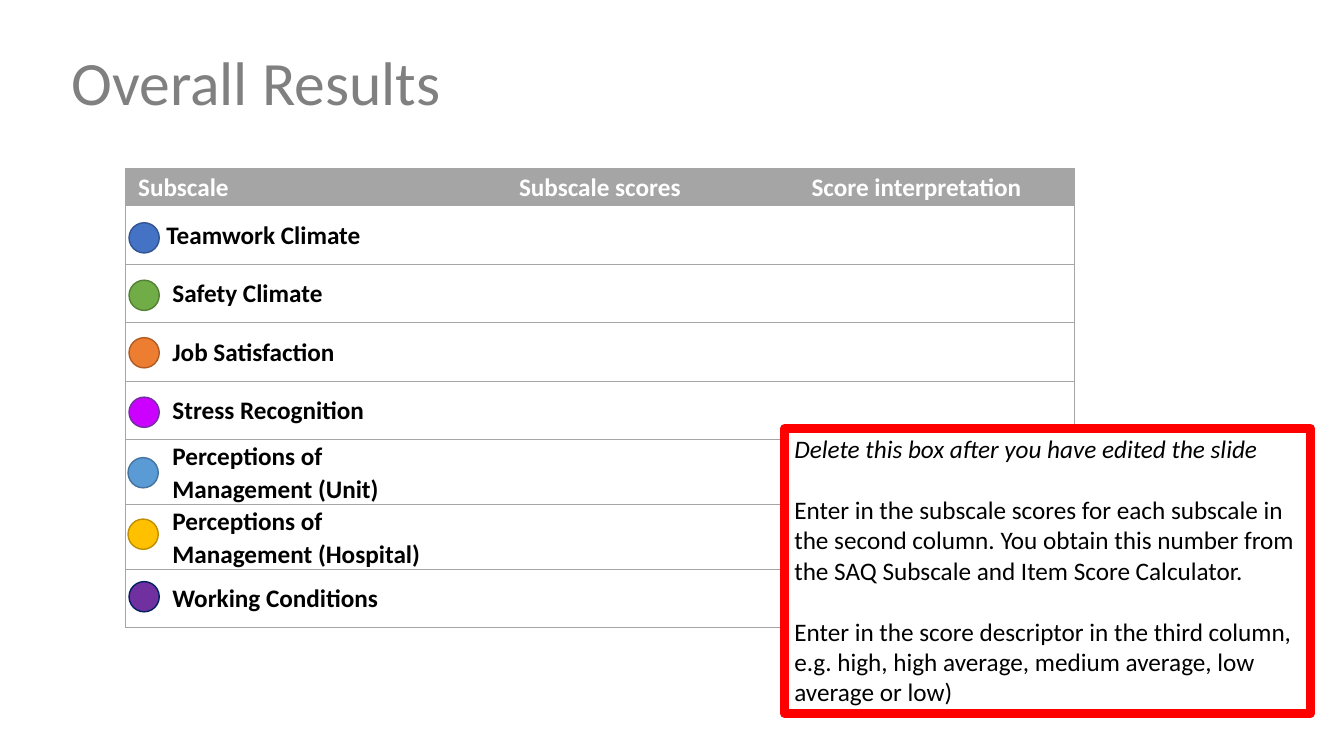
from pptx import Presentation
from pptx.dml.color import RGBColor
from pptx.enum.shapes import MSO_SHAPE
from pptx.enum.text import MSO_ANCHOR, PP_ALIGN
from pptx.oxml.ns import qn
from pptx.util import Inches, Pt
from lxml.etree import SubElement

FONT = "Calibri"
COLORS = {
    "grey": "A5A5A5", "title": "808080", "white": "FFFFFF",
    "black": "000000", "red": "FF0000",
}
HEADERS = ["Subscale", "Subscale scores", "Score interpretation"]
# label, text indent, dot left, dot top, dot fill, dot outline
SUBSCALES = [
    ("Teamwork Climate", 0.41, 1.28, 2.21, "4472C4", "325491"),
    ("Safety Climate", 0.47, 1.28, 2.78, "70AD47", "538035"),
    ("Job Satisfaction", 0.47, 1.28, 3.35, "ED7D31", "AF5C24"),
    ("Stress Recognition", 0.47, 1.28, 3.94, "CC00FF", "7030A0"),
    ("Perceptions of\nManagement (Unit)", 0.47, 1.27, 4.54, "5B9BD5", "43739E"),
    ("Perceptions of\nManagement (Hospital)", 0.47, 1.27, 5.15, "FFC000", "BD8E00"),
    ("Working Conditions", 0.47, 1.28, 5.77, "7030A0", "002060"),
]
INSTRUCTIONS = [
    "Delete this box after you have edited the slide",
    "Enter in the subscale scores for each subscale in the second column. "
    "You obtain this number from the SAQ Subscale and Item Score Calculator.",
    "Enter in the score descriptor in the third column, e.g. high, high average, "
    "medium average, low average or low)",
]


def rgb(value):
    return RGBColor.from_string(value)


def format_text(tf, size, color, bold=False, spacing=1.0, align=PP_ALIGN.LEFT):
    for p in tf.paragraphs:
        p.alignment = align
        p.line_spacing = spacing
        for r in p.runs:
            r.font.name = FONT
            r.font.size = Pt(size)
            r.font.bold = bold
            r.font.color.rgb = rgb(color)


def add_title(slide, text):
    tf = slide.shapes.add_textbox(
        Inches(0.61), Inches(0.4), Inches(11.22), Inches(0.89)).text_frame
    tf.word_wrap = True
    tf.vertical_anchor = MSO_ANCHOR.MIDDLE
    tf.text = text
    format_text(tf, 44, COLORS["title"], spacing=0.9)


def set_borders(cell, visible_sides):
    tcPr = cell._tc.get_or_add_tcPr()
    for side in "LRTB":
        ln = SubElement(tcPr, qn(f"a:ln{side}"), w=str(Pt(0.5)))
        if side in visible_sides:
            fill = SubElement(ln, qn("a:solidFill"))
            SubElement(fill, qn("a:srgbClr"), val=COLORS["grey"])
        else:
            SubElement(ln, qn("a:noFill"))


def fill_cell(cell, text, color, indent=0.07, align=PP_ALIGN.LEFT):
    cell.margin_left, cell.margin_right = Inches(indent), Inches(0.07)
    cell.margin_top = cell.margin_bottom = 0
    cell.vertical_anchor = MSO_ANCHOR.MIDDLE
    cell.text_frame.text = text
    format_text(cell.text_frame, 18, color, True, 1.07, align)


def add_results_table(slide):
    table = slide.shapes.add_table(
        len(SUBSCALES) + 1, len(HEADERS),
        Inches(1.24), Inches(1.67), Inches(9.42), Inches(4.43)).table
    table.first_row = table.horz_banding = False
    for col in table.columns:
        col.width = Inches(3.14)
    for i, row in enumerate(table.rows):
        row.height = Inches(0.58 if i else 0.37)
        for j, cell in enumerate(row.cells):
            set_borders(cell, {0: "LTB", 1: "TB", 2: "RTB"}[j])
            if i == 0:
                cell.fill.solid()
                cell.fill.fore_color.rgb = rgb(COLORS["grey"])
                fill_cell(cell, HEADERS[j], COLORS["white"],
                          *((0.07, PP_ALIGN.CENTER) if j else (0.13,)))
            else:
                cell.fill.background()
                label, indent = SUBSCALES[i - 1][:2]
                if j == 0:
                    fill_cell(cell, label, COLORS["black"], indent)
                else:
                    fill_cell(cell, "", COLORS["black"])


def add_outlined_shape(slide, kind, box, fill, line, weight):
    sp = slide.shapes.add_shape(kind, *(Inches(v) for v in box))
    sp.shadow.inherit = False
    sp.fill.solid()
    sp.fill.fore_color.rgb = rgb(fill)
    sp.line.color.rgb = rgb(line)
    sp.line.width = Pt(weight)
    return sp


def add_instruction_box(slide):
    sp = add_outlined_shape(slide, MSO_SHAPE.RECTANGLE, (7.78, 4.25, 5.22, 2.83),
                            COLORS["white"], COLORS["red"], 6)
    SubElement(sp.line._get_or_add_ln(), qn("a:round"))  # rounded line joins
    tf = sp.text_frame
    tf.word_wrap = True
    tf.vertical_anchor = MSO_ANCHOR.TOP
    tf.text = "\n".join(INSTRUCTIONS)
    format_text(tf, 18, COLORS["black"])
    tf.paragraphs[0].runs[0].font.italic = True
    for p in tf.paragraphs[1:]:
        p.space_before = Pt(22)


def main():
    prs = Presentation()
    prs.slide_width, prs.slide_height = Inches(13.33), Inches(7.5)
    slide = prs.slides.add_slide(prs.slide_layouts[6])

    # Title and table
    add_title(slide, "Overall Results")
    add_results_table(slide)

    # Editing instructions
    add_instruction_box(slide)

    # Colour key beside the subscale names
    for _, _, left, top, fill, line in SUBSCALES:
        add_outlined_shape(slide, MSO_SHAPE.OVAL, (left, top, 0.3, 0.3), fill, line, 1)

    prs.save("out.pptx")


if __name__ == "__main__":
    main()
